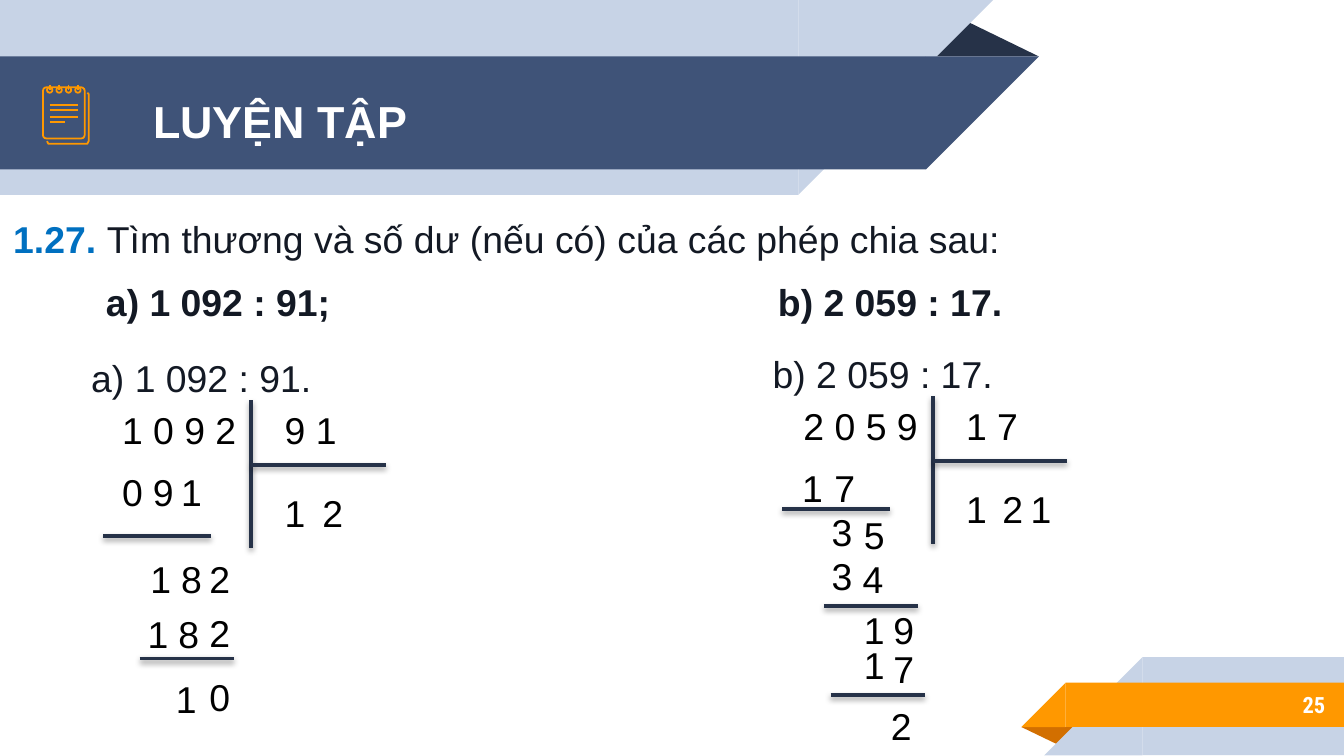
from lxml import etree
from pptx import Presentation
from pptx.dml.color import RGBColor
from pptx.enum import shapes as es, text as et
from pptx.oxml import ns
from pptx.util import Inches, Pt

PALE, NAVY, DARK, ORANGE = "C7D3E6", "3F5378", "263248", "FF9800"
INK, BLACK, WHITE, BLUE = "131924", "000000", "FFFFFF", "0070C0"
KIND, ALIGN = es.MSO_SHAPE, et.PP_ALIGN


def rgb(code):
    return RGBColor.from_string(code)


def add_shape(slide, kind, box, fill=None, line=None, turn=0, adj=None):
    shape = slide.shapes.add_shape(kind, *map(Inches, box))
    shape.shadow.inherit = False
    shape.rotation = turn
    if adj is not None:
        shape.adjustments[0] = adj
    paint(shape, fill, line)
    return shape


def paint(shape, fill, line):
    if fill:
        shape.fill.solid()
        shape.fill.fore_color.rgb = rgb(fill)
    else:
        shape.fill.background()
    if line:
        shape.line.color.rgb = rgb(line)
        shape.line.width = Pt(0.96)
    else:
        shape.line.fill.background()


def add_line(slide, start, end, color=DARK, width=2, shadow=True):
    line = slide.shapes.add_connector(
        es.MSO_CONNECTOR.STRAIGHT, *map(Inches, (*start, *end)))
    line.line.color.rgb = rgb(color)
    line.line.width = Pt(width)
    effects = etree.SubElement(line._element.spPr, ns.qn("a:effectLst"))
    if shadow:
        outer = etree.SubElement(
            effects, ns.qn("a:outerShdw"), blurRad=str(Pt(3.1)),
            dist=str(Pt(1.6)), dir="5400000", rotWithShape="0")
        tint = etree.SubElement(outer, ns.qn("a:srgbClr"), val=BLACK)
        etree.SubElement(tint, ns.qn("a:alpha"), val="38000")


def add_text(slide, box, runs, size=20, font="Arial", align=ALIGN.LEFT,
             space=None, wrap=True):
    """Add one paragraph; runs holds (text, color, bold) items."""
    shape = slide.shapes.add_textbox(*map(Inches, box))
    frame = shape.text_frame
    frame.word_wrap = wrap
    frame.auto_size = et.MSO_AUTO_SIZE.SHAPE_TO_FIT_TEXT
    para = frame.paragraphs[0]
    para.alignment = align
    if space:
        para.line_spacing = space
    for words, color, bold in runs:
        run = para.add_run()
        run.text = words
        run.font.name = font
        run.font.size = Pt(size)
        run.font.bold = bold
        run.font.color.rgb = rgb(color)
    return shape


def add_head(slide, x, y):
    add_shape(slide, KIND.ISOSCELES_TRIANGLE,
              (x + 6.88, y + 0.14, 0.85, 0.28), DARK, adj=0.324)
    for top, wide, high, fill in ((0, 5.94, 1.45, PALE),
                                  (0.42, 6.89, 0.84, NAVY)):
        add_shape(slide, KIND.RECTANGLE, (x, y + top, wide, high), fill)
        add_shape(slide, KIND.RIGHT_TRIANGLE,
                  (x + wide, y + top, high, high), fill, turn=90)
    add_pad(slide, x + 0.32, y + 0.63)
    add_text(slide, (x + 0.46, y + 0.45, 3.25, 0.71),
             [("LUYỆN TẬP", WHITE, True)], 24, align=ALIGN.CENTER, space=1.5)


def add_pad(slide, x, y):
    """Draw the notepad icon."""
    pen = slide.shapes.build_freeform(
        Inches(x + 0.03), Inches(y + 0.42), scale=1.0)
    edge = ((0.04, 0.44), (0.33, 0.44), (0.34, 0.42), (0.34, 0.07),
            (0.33, 0.06))
    pen.add_line_segments(
        [(Inches(x + dx), Inches(y + dy)) for dx, dy in edge], close=False)
    back = pen.convert_to_shape()
    back.shadow.inherit = False
    paint(back, None, ORANGE)
    add_shape(slide, KIND.ROUNDED_RECTANGLE, (x, y + 0.02, 0.31, 0.38),
              line=ORANGE, adj=0.08)
    for i in range(4):
        left = x + 0.03 + 0.07 * i
        add_shape(slide, KIND.OVAL, (left, y + 0.02, 0.04, 0.04), line=ORANGE)
        add_line(slide, (left + 0.02, y), (left + 0.02, y + 0.04),
                 ORANGE, 0.96, False)
    for dy, wide in ((0.15, 0.21), (0.19, 0.21), (0.24, 0.21), (0.28, 0.11)):
        add_line(slide, (x + 0.05, y + dy), (x + 0.05 + wide, y + dy),
                 ORANGE, 0.96, False)


def add_foot(slide, x, y):
    add_shape(slide, KIND.ISOSCELES_TRIANGLE, (x, y + 0.52, 0.43, 0.14),
              "D26F00", turn=180, adj=0.324)
    for left, top, wide, high, fill in ((0.17, 0, 1.5, 0.73, PALE),
                                        (0, 0.19, 2.07, 0.33, ORANGE)):
        add_shape(slide, KIND.RECTANGLE,
                  (x + left + high, y + top, wide, high), fill)
        add_shape(slide, KIND.RIGHT_TRIANGLE,
                  (x + left, y + top, high, high), fill, turn=270)
    page = add_text(slide, (x + 0.73, y + 0.18, 1.63, 0.35),
                    [("25", WHITE, True)], 12, "Roboto Condensed", ALIGN.RIGHT)
    frame = page.text_frame
    frame.auto_size = et.MSO_AUTO_SIZE.NONE
    frame.vertical_anchor = et.MSO_ANCHOR.MIDDLE
    frame.margin_top = frame.margin_bottom = Inches(0.1)


def add_task(slide, x, y):
    add_text(slide, (x, y, 7.59, 0.61),
             [("1.27. ", BLUE, True),
              ("Tìm thương và số dư (nếu có) của các phép chia sau:",
               INK, False)],
             align=ALIGN.JUSTIFY, space=1.5, wrap=False)
    parts = add_text(slide, (x + 0.69, y + 0.47, 7.38, 0.54),
                     [("a) 1 092 : 91;\tb) 2 059 : 17.", INK, True)],
                     align=ALIGN.JUSTIFY, space=1.5)
    props = parts.text_frame.paragraphs[0]._p.get_or_add_pPr()
    tabs = etree.SubElement(props, ns.qn("a:tabLst"))
    etree.SubElement(tabs, ns.qn("a:tab"), pos=str(Inches(5)), algn="l")


def add_division(slide, x, y, label, top, by, rows, rules):
    """Draw a long division; rows hold digits and their offsets."""
    add_text(slide, (x - 0.23, y - 0.55, 1.85, 0.61), [(label, INK, False)],
             align=ALIGN.JUSTIFY, space=1.5, wrap=False)
    add_text(slide, (x, y, 1.21, 0.44), [(top, BLACK, False)])
    add_text(slide, (x + 1.21, y, 0.66, 0.44), [(by, BLACK, False)])
    add_line(slide, (x + 1.06, y), (x + 1.06, y + 1.1))
    add_line(slide, (x + 1.06, y + 0.48), (x + 2.06, y + 0.48))
    for digits, *spots in rows:
        for digit, (dx, dy) in zip(digits, spots):
            add_text(slide, (x + dx, y + dy, 0.66, 0.44),
                     [(digit, BLACK, False)])
    for dx, dy, wide in rules:
        add_line(slide, (x + dx, y + dy), (x + dx + wide, y + dy))


def main():
    deck = Presentation()
    deck.slide_width = Inches(10)
    deck.slide_height = deck.slide_width * 9 // 16
    slide = deck.slides.add_slide(deck.slide_layouts[6])
    add_head(slide, 0, 0)
    add_foot(slide, 7.6, 4.89)
    add_task(slide, 0, 1.39)
    add_division(
        slide, 0.81, 2.98, "a) 1 092 : 91.", "1 0 9 2", "9 1",
        [("12", (1.21, 0.62), (1.49, 0.62)),
         ("091", (0, 0.46), (0.23, 0.46), (0.44, 0.46)),
         ("182", (0.21, 1.11), (0.44, 1.11), (0.65, 1.11)),
         ("182", (0.19, 1.52), (0.42, 1.52), (0.65, 1.51)),
         ("10", (0.4, 2), (0.65, 1.99))],
        [(-0.04, 1.01, 0.8), (0.23, 1.92, 0.7)])
    add_division(
        slide, 5.88, 2.95, "b) 2 059 : 17.", "2 0 5 9", "1 7",
        [("121", (1.21, 0.62), (1.48, 0.62), (1.69, 0.62)),
         ("17", (-0.01, 0.46), (0.23, 0.46)),
         ("35", (0.21, 0.79), (0.45, 0.81)),
         ("34", (0.21, 1.12), (0.44, 1.14)),
         ("19", (0.45, 1.52), (0.67, 1.52)),
         ("17", (0.45, 1.78), (0.67, 1.81)),
         ("2", (0.65, 2.23))],
        [(-0.06, 0.84, 0.8), (0.25, 1.56, 0.7), (0.3, 2.22, 0.7)])
    deck.save("out.pptx")


if __name__ == "__main__":
    main()
